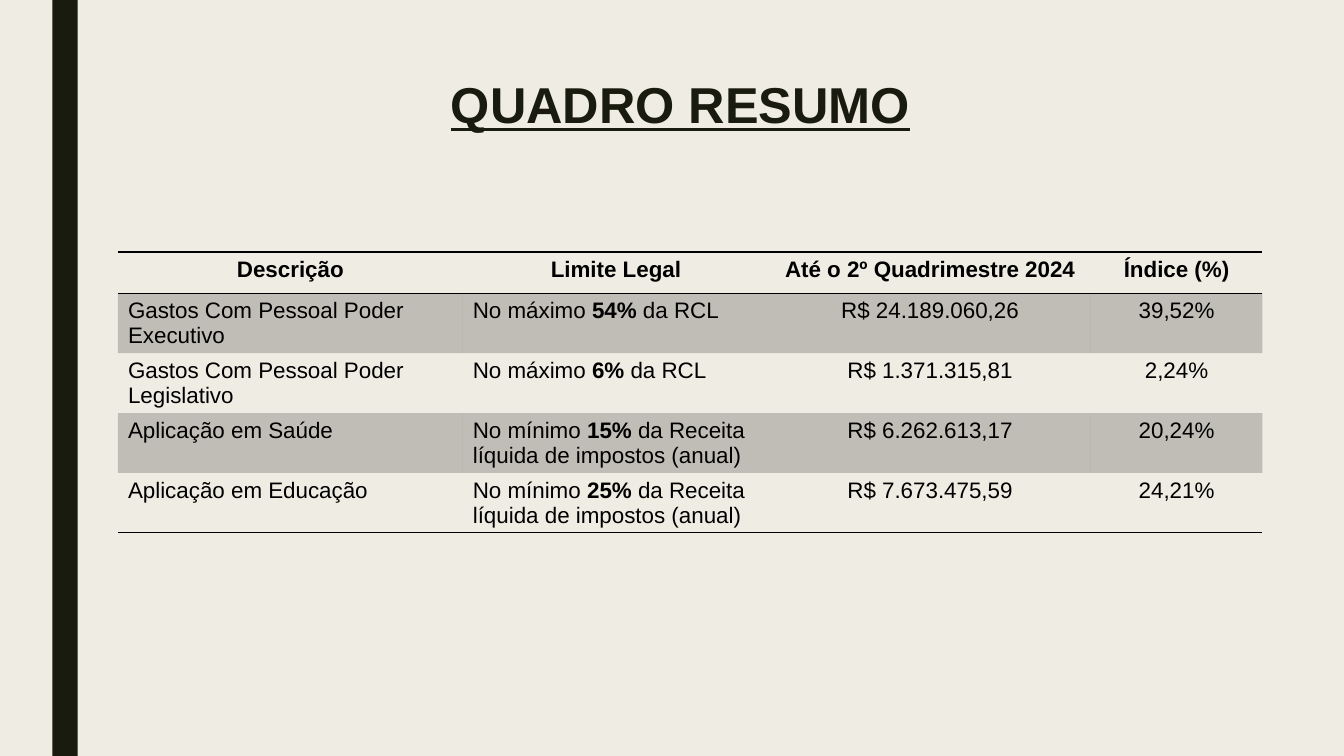
from lxml.etree import SubElement
from pptx import Presentation
from pptx.dml.color import RGBColor
from pptx.enum.shapes import MSO_SHAPE as Shape
from pptx.enum.text import MSO_ANCHOR as Anchor, PP_ALIGN as Align
from pptx.oxml import parse_xml
from pptx.oxml.ns import nsdecls, qn
from pptx.util import Inches, Pt

NO_STYLE = "{2D5ABB26-0587-4C30-8999-92F81FD0307C}"


def color(value):
    return RGBColor.from_string(value)


class SummarySlide:
    """Holds the style of the summary and the slide it is drawn on."""

    font = "Arial"
    paper, dark, ink = "EFEDE3", "191B0E", "000000"

    def __init__(self, deck):
        self.slide = deck.slides.add_slide(deck.slide_layouts[5])
        fill = self.slide.background.fill
        fill.solid()
        fill.fore_color.rgb = color(self.paper)

    def run(self, paragraph, text, size, tint, bold=False, underline=False):
        run = paragraph.add_run()
        run.text = text
        run.font.name = self.font
        run.font.size = Pt(size)
        run.font.bold = bold
        run.font.underline = underline
        run.font.color.rgb = color(tint)

    def bar(self, left, top, width, height):
        bar = self.slide.shapes.add_shape(
            Shape.RECTANGLE, Inches(left), Inches(top), Inches(width), Inches(height))
        bar.shadow.inherit = False
        bar.fill.solid()
        bar.fill.fore_color.rgb = color(self.dark)
        bar.line.fill.background()

    def title(self, text, left, top, width, height):
        title = self.slide.shapes.title
        title.left, title.top = Inches(left), Inches(top)
        title.width, title.height = Inches(width), Inches(height)
        frame = title.text_frame
        frame.word_wrap = True
        frame.vertical_anchor = Anchor.TOP
        heading = frame.paragraphs[0]
        heading.alignment = Align.CENTER
        heading.line_spacing = 0.89
        self.run(heading, text, 36, self.dark, bold=True, underline=True)

    def shade(self, cell, shaded):
        if not shaded:
            cell.fill.background()
            return
        cell.fill.solid()
        cell.fill.fore_color.rgb = color(self.ink)
        tint = cell._tc.tcPr.find(".//" + qn("a:srgbClr"))
        SubElement(tint, qn("a:alpha"), val="20000")

    def rules(self, cell, sides):
        for place, side in enumerate(sides):
            cell._tc.tcPr.insert(place, parse_xml(
                f'<a:ln{side} {nsdecls("a")} w="{Pt(1)}"><a:solidFill>'
                f'<a:srgbClr val="{self.ink}"/></a:solidFill></a:ln{side}>'))

    def table(self, rows, left, top, widths, heights):
        table = self.slide.shapes.add_table(
            len(rows), len(widths), Inches(left), Inches(top),
            Inches(sum(widths)), Inches(sum(heights))).table
        table.first_row = table.horz_banding = False
        table._tbl.tblPr.find(qn("a:tableStyleId")).text = NO_STYLE
        for column, width in zip(table.columns, widths):
            column.width = Inches(width)
        for row, height in zip(table.rows, heights):
            row.height = Inches(height)
        for r, entries in enumerate(rows):
            header, last = r == 0, r == len(rows) - 1
            for c, parts in enumerate(entries):
                cell = table.cell(r, c)
                paragraph = cell.text_frame.paragraphs[0]
                paragraph.alignment = Align.CENTER if header or c > 1 else Align.LEFT
                for i, part in enumerate(parts):
                    self.run(paragraph, part, 16, self.ink, bold=header or i == 1)
                self.shade(cell, r % 2 == 1)
                self.rules(cell, "TB" if header else "B" if last else "")


def main():
    deck = Presentation()
    deck.slide_width, deck.slide_height = Inches(13.33), Inches(7.5)
    summary = SummarySlide(deck)
    summary.bar(0.52, 0, 0.25, 7.5)
    summary.title("QUADRO RESUMO", 1.5, 0.75, 10.5, 0.89)
    revenue = " da Receita líquida de impostos (anual)"
    limits = [
        [["Descrição"], ["Limite Legal"], ["Até o 2º Quadrimestre 2024"], ["Índice (%)"]],
        [["Gastos Com Pessoal Poder Executivo"], ["No máximo ", "54%", " da RCL"],
         ["R$ 24.189.060,26"], ["39,52%"]],
        [["Gastos Com Pessoal Poder Legislativo"], ["No máximo ", "6%", " da RCL"],
         ["R$ 1.371.315,81"], ["2,24%"]],
        [["Aplicação em Saúde"], ["No mínimo ", "15%", revenue],
         ["R$ 6.262.613,17"], ["20,24%"]],
        [["Aplicação em Educação"], ["No mínimo ", "25%", revenue],
         ["R$ 7.673.475,59"], ["24,21%"]],
    ]
    summary.table(limits, 1.17, 2.5, [3.42, 3.04, 3.19, 1.7], [0.41] + [0.59] * 4)
    deck.save("out.pptx")


if __name__ == "__main__":
    main()
